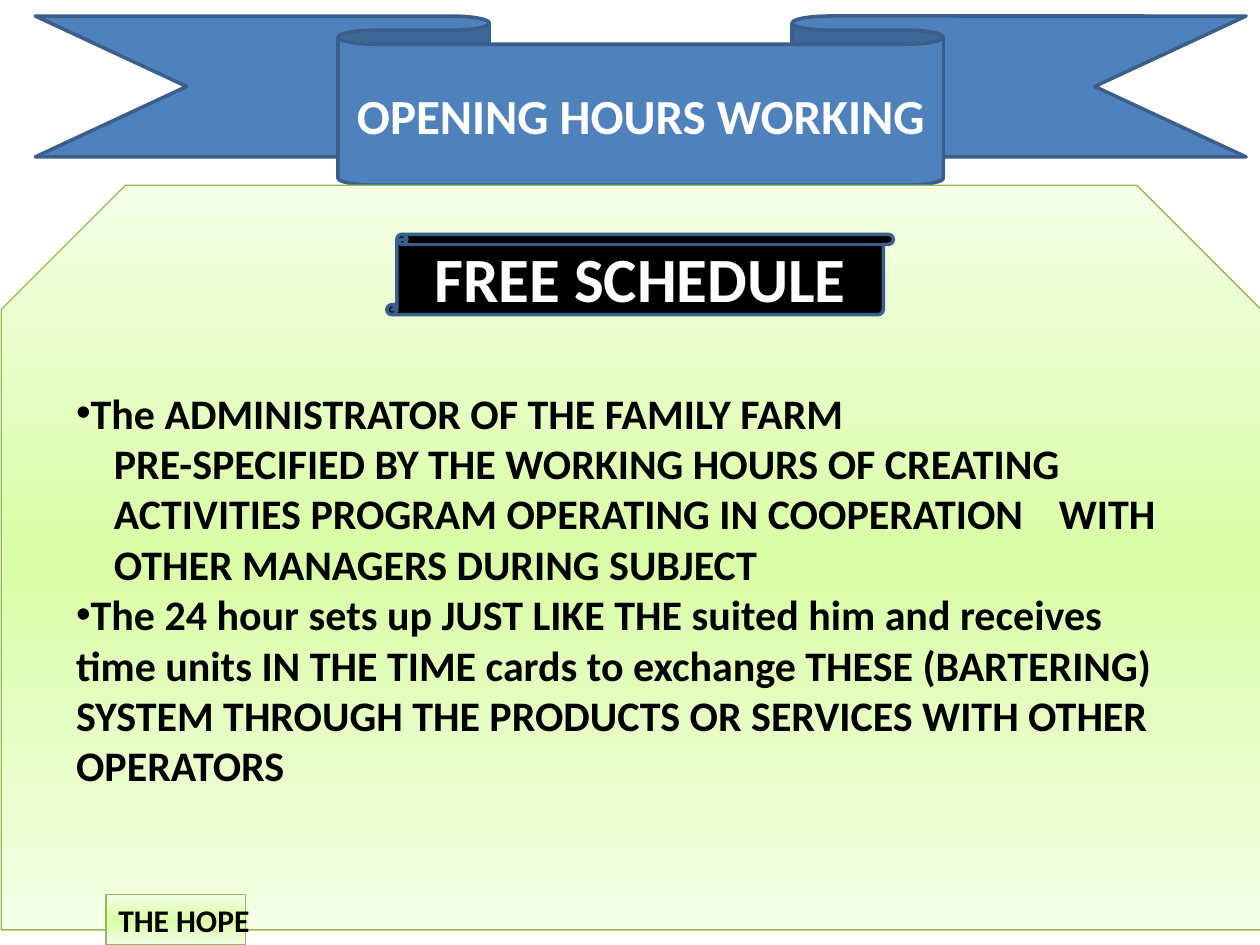
import collections
import copy
import pptx
import pptx.dml.color
import pptx.enum.shapes
import pptx.enum.text
import pptx.util
from lxml import etree
from pptx.oxml.ns import qn

SHAPES = pptx.enum.shapes.MSO_SHAPE
ALIGN = pptx.enum.text.PP_ALIGN
ANCHOR = pptx.enum.text.MSO_ANCHOR
Inches = pptx.util.Inches

Box = collections.namedtuple("Box", "left top width height")
SLIDE = Box(0, 0, 10, 7.5)
INSET = {"margin_left": Inches(0.1), "margin_right": Inches(0.1),
         "margin_top": Inches(0.05), "margin_bottom": Inches(0.05)}
SNIP = 0.167
GREEN_STOPS = [(0, "F4FFE6"), (0.5, "D9FDA6"), (1, "F4FFE6")]
BULLETED, INDENTED = "•", ""
SCHEDULE = [
    (BULLETED, "The ADMINISTRATOR OF THE FAMILY FARM"),
    (INDENTED, "PRE-SPECIFIED BY THE WORKING HOURS OF CREATING"),
    (INDENTED, "ACTIVITIES PROGRAM OPERATING IN COOPERATION\tWITH"),
    (INDENTED, "OTHER MANAGERS DURING SUBJECT"),
    (BULLETED, "The 24 hour sets up JUST LIKE THE suited him and receives "
               "time units IN THE TIME cards to exchange THESE (BARTERING) "
               "SYSTEM THROUGH THE PRODUCTS OR SERVICES WITH OTHER OPERATORS"),
]


def colour(value):
    return pptx.dml.color.RGBColor.from_string(value)


def apply(target, values):
    for key, value in values.items():
        setattr(target, key, value)


def part(box, left, top, width, height):
    return Box(box.left + left * box.width, box.top + top * box.height,
               width * box.width, height * box.height)


def place(shape, box):
    apply(shape, {key: Inches(value) for key, value in box._asdict().items()})


def add_outline(slide, kind, box, line, width, adjustments=()):
    outline = slide.shapes.add_shape(kind, *(Inches(value) for value in box))
    outline.shadow.inherit = False
    for index, value in enumerate(adjustments):
        outline.adjustments[index] = value
    outline.line.color.rgb = colour(line)
    outline.line.width = pptx.util.Pt(width)
    return outline


def fill_solid(shape, value):
    shape.fill.solid()
    shape.fill.fore_color.rgb = colour(value)


def fill_green(shape):
    shape.fill.gradient()
    shape.fill.gradient_angle = 90
    stops = shape._element.spPr.find(qn("a:gradFill")).find(qn("a:gsLst"))
    stops.append(copy.deepcopy(stops[0]))
    for stop, (position, value) in zip(shape.fill.gradient_stops, GREEN_STOPS):
        stop.position = position
        stop.color.rgb = colour(value)


def format_frame(shape, anchor, wrap=True):
    frame = shape.text_frame
    apply(frame, {**INSET, "word_wrap": wrap, "vertical_anchor": anchor,
                  "auto_size": pptx.enum.text.MSO_AUTO_SIZE.NONE})
    return frame


def format_paragraph(paragraph, size, value, align):
    apply(paragraph, {"alignment": align, "space_before": pptx.util.Pt(0)})
    apply(paragraph.font, {"name": "Calibri", "size": pptx.util.Pt(size), "bold": True})
    paragraph.font.color.rgb = colour(value)


def write_label(shape, text, size, value, align=ALIGN.CENTER, anchor=ANCHOR.MIDDLE, wrap=True):
    frame = format_frame(shape, anchor, wrap)
    frame.text = text
    format_paragraph(frame.paragraphs[0], size, value, align)


def set_bullet(paragraph, mark):
    properties = paragraph._p.get_or_add_pPr()
    indent = 0 if mark else Inches(0.3)
    properties.set("marL", str(indent))
    properties.set("indent", "0")
    if mark:
        etree.SubElement(properties, qn("a:buChar")).set("char", mark)
    else:
        etree.SubElement(properties, qn("a:buNone"))
        tabs = etree.SubElement(properties, qn("a:tabLst"))
        tab = etree.SubElement(tabs, qn("a:tab"))
        tab.set("pos", str(Inches(7.82)))
        tab.set("algn", "l")


def add_banner(slide, box):
    ribbon = add_outline(slide, SHAPES.DOWN_RIBBON, box, "3A5F8B", 2, (SNIP, 0.5))
    fill_solid(ribbon, "4F81BD")
    title = slide.shapes.title
    place(title, part(box, 0.25, SNIP, 0.5, 1 - SNIP))
    write_label(title, "OPENING HOURS WORKING", 28, "FFFFFF")
    ribbon._element.addnext(title._element)


def add_schedule(slide, box):
    panel = add_outline(slide, SHAPES.SNIP_2_SAME_RECTANGLE, box, "98B855", 0.75, (SNIP, 0))
    fill_green(panel)
    corner = SNIP * box.height / 2
    body = slide.placeholders[1]
    place(body, Box(box.left + corner, box.top + corner,
                    box.width - 2 * corner, box.height - corner))
    frame = format_frame(body, ANCHOR.MIDDLE)
    for index, (mark, text) in enumerate(SCHEDULE):
        paragraph = frame.add_paragraph() if index else frame.paragraphs[0]
        paragraph.text = text
        set_bullet(paragraph, mark)
        format_paragraph(paragraph, 24, "000000", ALIGN.LEFT)
    panel._element.addnext(body._element)


def add_scroll(slide, box):
    scroll = add_outline(slide, SHAPES.VERTICAL_SCROLL, box, "3A5F8B", 2, (0.125,))
    fill_solid(scroll, "000000")
    write_label(scroll, "FREE SCHEDULE", 36, "FFFFFF")


def add_signature(slide, box):
    signature = add_outline(slide, SHAPES.RECTANGLE, box, "98B855", 0.75)
    fill_green(signature)
    write_label(signature, "THE HOPE", 18, "000000", ALIGN.LEFT, ANCHOR.TOP, False)


def main():
    deck = pptx.Presentation()
    apply(deck, {"slide_width": Inches(SLIDE.width), "slide_height": Inches(SLIDE.height)})
    slide = deck.slides.add_slide(deck.slide_layouts[1])
    add_banner(slide, part(SLIDE, 0.028, 0.017, 0.961, 0.179))
    add_schedule(slide, part(SLIDE, 0.001, 0.196, 1, 0.788))
    add_scroll(slide, part(SLIDE, 0.307, 0.248, 0.402, 0.085))
    add_signature(slide, part(SLIDE, 0.084, 0.947, 0.111, 0.053))
    deck.save("out.pptx")


if __name__ == "__main__":
    main()
